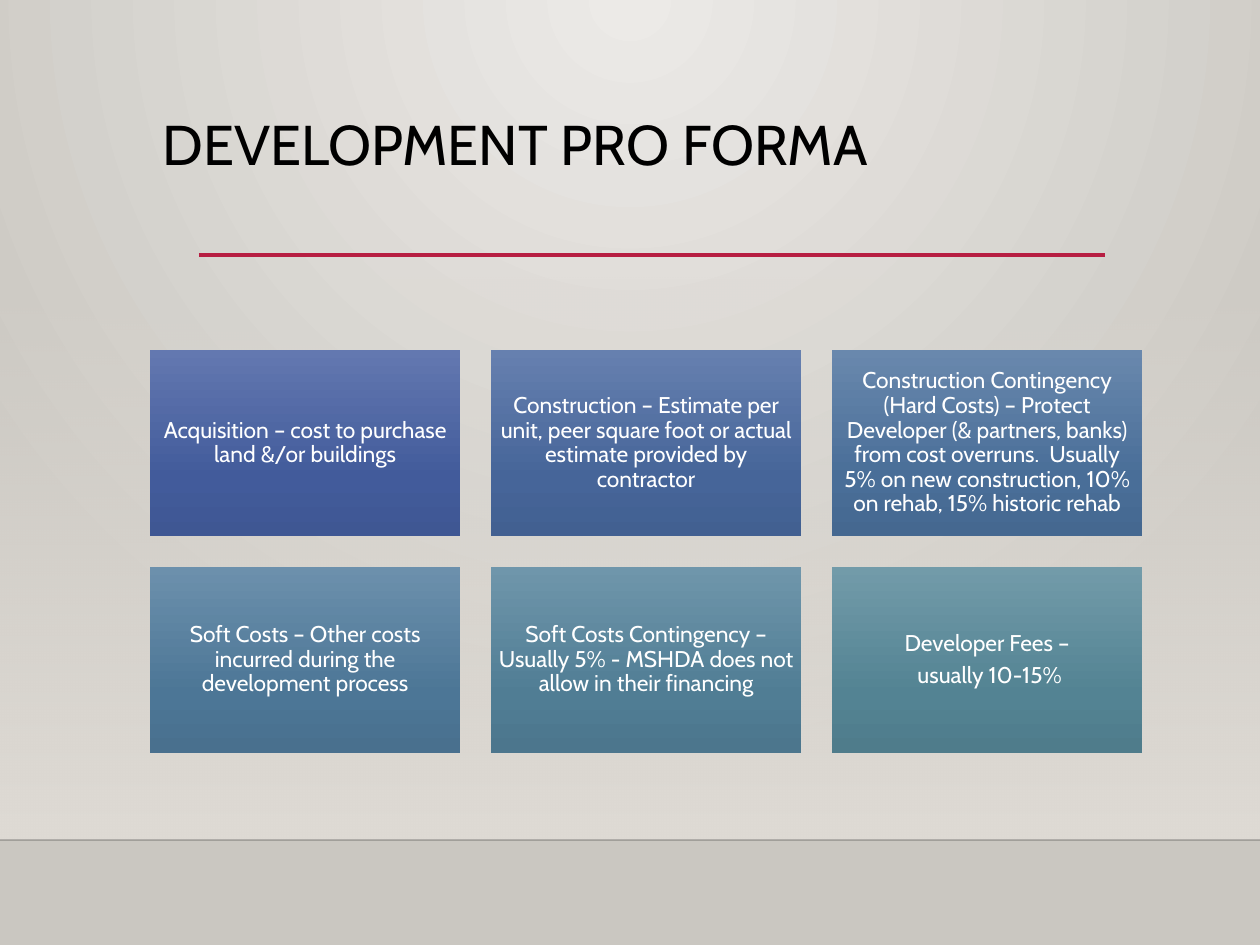
import pptx
import pptx.dml.color
import pptx.enum.shapes
import pptx.enum.text
import pptx.oxml
import pptx.oxml.ns
import pptx.util

SCALE = 914400 / 126  # EMU in one px
FONT = "Cabin"
hex_color = pptx.dml.color.RGBColor.from_string


def px(*lengths):
    return [pptx.util.Emu(round(length * SCALE)) for length in lengths]


def set_gradient(owner, fill, stops, direction):
    """Fill with (position %, colour, opacity %) stops and a direction element."""
    fill.gradient()
    old = owner.xpath(".//a:gradFill")[0]
    stop_xml = "".join(
        f'<a:gs pos="{pos * 1000}"><a:srgbClr val="{color}">'
        f'<a:alpha val="{opacity * 1000}"/></a:srgbClr></a:gs>'
        for pos, color, opacity in stops)
    new = pptx.oxml.parse_xml(
        f'<a:gradFill {pptx.oxml.ns.nsdecls("a")} rotWithShape="1">'
        f"<a:gsLst>{stop_xml}</a:gsLst>{direction}</a:gradFill>")
    old.getparent().replace(old, new)


DOWN = '<a:lin ang="5400000" scaled="0"/>'
RADIAL = ('<a:path path="circle">'
          '<a:fillToRect l="43000" t="0" r="43000" b="100000"/></a:path>')

deck = pptx.Presentation()
deck.slide_width, deck.slide_height = px(1260, 945)
page = deck.slides.add_slide(deck.slide_layouts[5])
RECTANGLE = pptx.enum.shapes.MSO_SHAPE.RECTANGLE

# Background and the panel that fades in above the floor
set_gradient(page.background._cSld, page.background.fill,
             [(0, "ECEAE7", 100), (100, "CAC7C1", 100)], RADIAL)
panel = page.shapes.add_shape(RECTANGLE, *px(0, 277, 1260, 563))
panel.shadow.inherit = False
panel.line.fill.background()
set_gradient(panel._element, panel.fill,
             [(0, "DFDBD5", 0), (100, "DFDBD5", 100)], DOWN)

# Floor line and red title rule
for left, right, y, color, width, opacity in [
        (0, 1260, 840, "000001", 1, 20),
        (199, 1105, 255, "B71E42", 2.5, 100)]:
    rule = page.shapes.add_connector(
        pptx.enum.shapes.MSO_CONNECTOR.STRAIGHT, *px(left, y, right, y))
    rule.line.width = pptx.util.Pt(width)
    rule.line.color.rgb = hex_color(color)
    properties = rule._element.spPr
    alpha = pptx.oxml.ns.qn("a:alpha")
    tint = properties.xpath(".//a:srgbClr")[0]
    tint.append(tint.makeelement(alpha, {"val": str(opacity * 1000)}))
    properties.append(
        properties.makeelement(pptx.oxml.ns.qn("a:effectLst"), {}))

# Title
title = page.shapes.title
title.left, title.top, title.width, title.height = px(150, 111, 993, 145)
title.text_frame.text = "DEVELOPMENT PRO FORMA"
title.text_frame.auto_size = pptx.enum.text.MSO_AUTO_SIZE.NONE
title.text_frame.vertical_anchor = pptx.enum.text.MSO_ANCHOR.TOP
para = title.text_frame.paragraphs[0]
para.alignment = pptx.enum.text.PP_ALIGN.LEFT
para.line_spacing = 0.9
para.font.name = FONT
para.font.size = pptx.util.Pt(32)
para.font.color.rgb = hex_color("000000")

# Cost boxes: three columns by two rows, each with its own gradient
costs = [
    (["Acquisition – cost to purchase land &/or buildings"],
     ["6378B0", "425B9B", "3F5793"]),
    (["Construction – Estimate per unit, peer square foot or actual "
      "estimate provided by contractor"],
     ["6680AF", "466599", "426091"]),
    (["Construction Contingency (Hard Costs) – Protect Developer "
      "(& partners, banks) from cost overruns.  Usually 5% on new "
      "construction, 10% on rehab, 15% historic rehab"],
     ["6988AD", "496E98", "456890"]),
    (["Soft Costs – Other costs incurred during the development process"],
     ["6C90AC", "4C7696", "49708E"]),
    (["Soft Costs Contingency – Usually 5% - MSHDA does not allow in "
      "their financing"],
     ["6F96AB", "507D94", "4C768D"]),
    (["Developer Fees –", " usually 10-15%"],
     ["729BA9", "538393", "4F7C8B"]),
]
inset = pptx.util.Inches(0.05)
frame_format = {
    "margin_left": inset, "margin_right": inset,
    "margin_top": inset, "margin_bottom": inset,
    "word_wrap": True, "vertical_anchor": pptx.enum.text.MSO_ANCHOR.MIDDLE,
}
para_format = {
    "alignment": pptx.enum.text.PP_ALIGN.CENTER,
    "line_spacing": 0.9, "space_after": pptx.util.Pt(4.5),
}
for index, (lines, colors) in enumerate(costs):
    row, column = divmod(index, 3)
    box = page.shapes.add_shape(
        RECTANGLE, *px(150 + 341 * column, 350 + 217 * row, 310, 186))
    box.shadow.inherit = False
    box.line.fill.background()
    set_gradient(box._element, box.fill,
                 [(pos, color, 100) for pos, color in zip((0, 69, 100), colors)],
                 DOWN)
    frame = box.text_frame
    for name, value in frame_format.items():
        setattr(frame, name, value)
    frame.text = "\n".join(lines)
    for para in frame.paragraphs:
        for name, value in para_format.items():
            setattr(para, name, value)
        para.font.name = FONT
        para.font.size = pptx.util.Pt(13)
        para.font.color.rgb = hex_color("FFFFFF")

deck.save("out.pptx")
